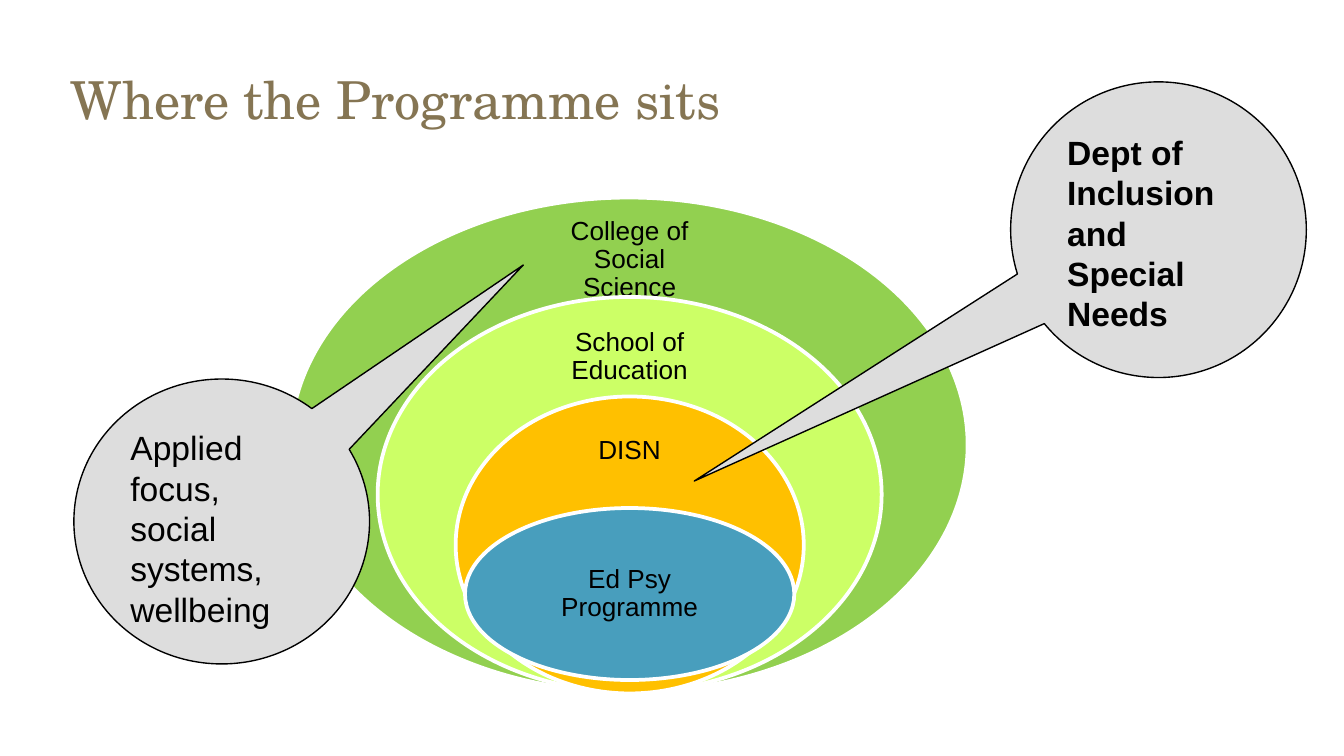
from pptx import Presentation
from pptx.dml.color import RGBColor
from pptx.enum.shapes import MSO_SHAPE as Shape
from pptx.enum.text import MSO_ANCHOR as Anchor, PP_ALIGN as Align
from pptx.util import Inches, Pt

WHITE = RGBColor(0xFF, 0xFF, 0xFF)
BLACK = RGBColor(0, 0, 0)
BROWN = RGBColor(0x85, 0x75, 0x53)
GREEN = RGBColor(0x92, 0xD0, 0x50)
LIME = RGBColor(0xCC, 0xFF, 0x66)
AMBER = RGBColor(0xFF, 0xC0, 0x00)
BLUE = RGBColor(0x48, 0x9E, 0xBD)
GREY = RGBColor(0xDD, 0xDD, 0xDD)

# Widescreen 16:9 slide
prs = Presentation()
prs.slide_width = Inches(10)
prs.slide_height = Inches(10) * 9 // 16
slide = prs.slides.add_slide(prs.slide_layouts[6])


def add_text(frame, text, size, color=BLACK, face="Arial", bold=False,
             align=Align.LEFT, anchor=Anchor.TOP):
    frame.word_wrap = True
    frame.vertical_anchor = anchor
    para = frame.paragraphs[0]
    para.alignment = align
    run = para.add_run()
    run.text = text
    run.font.size = Pt(size)
    run.font.name = face
    run.font.bold = bold
    run.font.color.rgb = color
    return para


def add_oval(kind, box, fill, line, width):
    shape = slide.shapes.add_shape(kind, *map(Inches, box))
    shape.shadow.inherit = False
    shape.fill.solid()
    shape.fill.fore_color.rgb = fill
    shape.line.color.rgb = line
    shape.line.width = Pt(width)
    return shape


# Title
title = slide.shapes.add_textbox(Inches(0.43), Inches(0.45), Inches(8.5), Inches(0.94))
add_text(title.text_frame, "Where the Programme sits", 28, BROWN, "TeX Gyre Schola")

# Nested rings, outermost first, each with its label
rings = [
    ("College of Social Science", GREEN, (2.16, 1.47, 5.04, 3.68), (3.98, 1.66, 1.41, 0.55)),
    ("School of Education", LIME, (2.81, 2.21, 3.75, 2.94), (4.03, 2.39, 1.31, 0.53)),
    ("DISN", AMBER, (3.39, 2.95, 2.59, 2.21), (4.08, 3.11, 1.21, 0.5)),
    ("Ed Psy Programme", BLUE, (3.46, 3.78, 2.45, 1.28), (3.82, 4.1, 1.73, 0.64)),
]
for text, fill, oval, box in rings:
    add_oval(Shape.OVAL, oval, fill, WHITE, 2)
    frame = slide.shapes.add_textbox(*map(Inches, box)).text_frame
    frame.margin_left = frame.margin_right = Inches(0.11)
    frame.margin_top = frame.margin_bottom = Inches(0.11)
    para = add_text(frame, text, 14, align=Align.CENTER, anchor=Anchor.MIDDLE)
    para.line_spacing = 0.9

# Callouts pointing at the rings
notes = [
    ("Dept of Inclusion and Special Needs", True, (7.52, 0.61, 2.2, 2.2), (-1.57, 0.85)),
    ("Applied focus, social systems, wellbeing", False, (0.55, 2.82, 2.2, 2.12), (1.02, -0.9)),
]
for text, bold, box, tip in notes:
    note = add_oval(Shape.OVAL_CALLOUT, box, GREY, BLACK, 0.75)
    note.adjustments[0], note.adjustments[1] = tip
    add_text(note.text_frame, text, 18, bold=bold)

prs.save("out.pptx")
